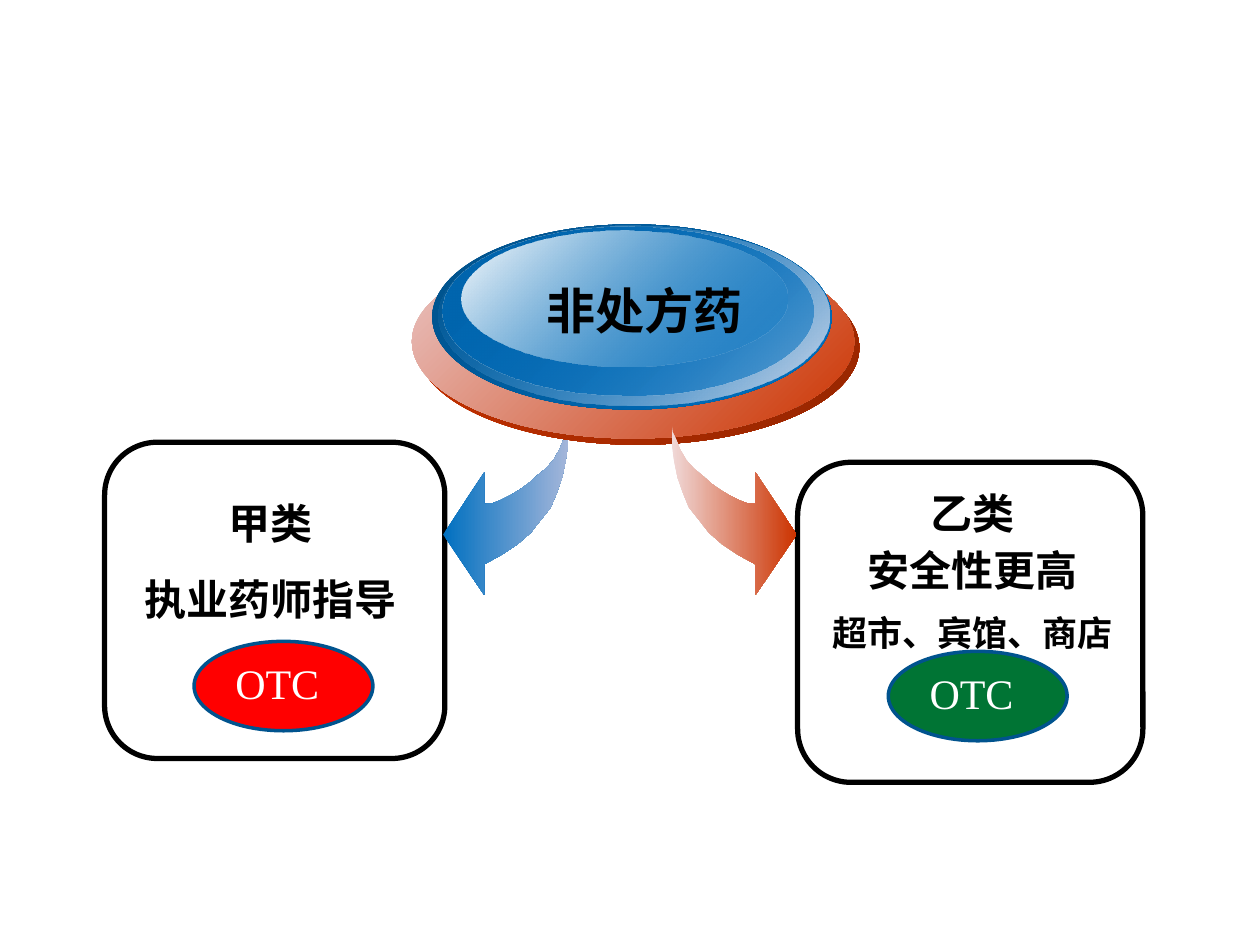
import lxml.etree
import pptx
import pptx.dml.color
import pptx.enum.shapes
import pptx.enum.text
import pptx.oxml.ns
import pptx.util

Pt = pptx.util.Pt
SHAPE = pptx.enum.shapes.MSO_SHAPE
ALIGN = pptx.enum.text.PP_ALIGN
qn = pptx.oxml.ns.qn

ARROW = [
    (0, 0), (0, 11.5), (1.5, 21.5), (3.5, 31), (6.5, 39.5), (10, 48),
    (16, 55.5), (21.5, 62.5), (29, 69), (38, 75), (48, 80.5), (48, 98),
    (71.5, 63.5), (48, 28), (48, 46), (43, 45.5), (39, 44), (33, 41),
    (28, 38), (23, 34.5), (18, 30), (13, 26), (8.5, 21), (5, 15),
    (3, 10), (0.75, 5),
]
DISC_LAYERS = [
    ((238.3, 143.3, 252.7, 110.9), [("CC3300", 100), ("952500", 100)]),
    ((235.4, 139.7, 252.7, 110.9), [("EAC7C6", 100), ("CC3300", 100)]),
    ((247, 128.2, 228.2, 105.8), [("005089", 100), ("0070C0", 100)]),
    ((250.6, 128.9, 223.2, 103), [("0070C0", 0), ("D4DBEB", 100)]),
    ((252.7, 129.6, 212.4, 96.5), [("0065AE", 100), ("0070C0", 48)]),
    ((263.5, 131.8, 186.5, 77.8), [("FFFFFF", 100), ("0070C0", 38)]),
]


def rgb(value):
    return pptx.dml.color.RGBColor.from_string(value)


class SlideBuilder:
    cjk = "Noto Sans CJK SC"
    black = "000000"
    badge_line = "00538E"

    def __init__(self, slide):
        self.s = slide

    def gradient(self, sp, stops, angle):
        sp.fill.gradient()
        sp.fill.gradient_angle = angle
        for stop, (color, opacity) in zip(sp.fill.gradient_stops, stops):
            stop.color.rgb = rgb(color)
        for clr, (color, opacity) in zip(sp._element.spPr.iter(qn("a:srgbClr")), stops):
            if opacity < 100:
                lxml.etree.SubElement(clr, qn("a:alpha"), val=str(opacity * 1000))

    def shape(self, kind, box, fill=None, line=None, width=0):
        sp = self.s.shapes.add_shape(kind, *map(Pt, box))
        sp.shadow.inherit = False
        if fill:
            sp.fill.solid()
            sp.fill.fore_color.rgb = rgb(fill)
        else:
            sp.fill.background()
        if line:
            sp.line.color.rgb = rgb(line)
            sp.line.width = Pt(width)
        else:
            sp.line.fill.background()
        return sp

    def card(self, box):
        return self.shape(SHAPE.ROUNDED_RECTANGLE, box, line=self.black, width=3)

    def disc(self, layers):
        for box, stops in layers:
            self.gradient(self.shape(SHAPE.OVAL, box), stops, 315)

    def arrow(self, x, y, direction, stops):
        points = [(Pt(x + direction * dx), Pt(y + dy)) for dx, dy in ARROW]
        fb = self.s.shapes.build_freeform(*points[0])
        fb.add_line_segments(points[1:], close=True)
        sp = fb.convert_to_shape()
        sp.shadow.inherit = False
        self.gradient(sp, stops, 0)
        sp.line.fill.background()

    def text(self, box, lines, font, color, bold=True, align=ALIGN.CENTER, spacing=None):
        tf = self.s.shapes.add_textbox(*map(Pt, box)).text_frame
        tf.word_wrap = True
        for i, (content, size) in enumerate(lines):
            p = tf.paragraphs[0] if i == 0 else tf.add_paragraph()
            for name, value in {"alignment": align, "line_spacing": spacing}.items():
                setattr(p, name, value)
            r = p.add_run()
            r.text = content
            for name, value in {"name": font, "size": Pt(size), "bold": bold}.items():
                setattr(r.font, name, value)
            r.font.color.rgb = rgb(color)
            if font == self.cjk:
                ea = lxml.etree.Element(qn("a:ea"), typeface=font)
                r.font._element.find(qn("a:latin")).addnext(ea)

    def badge(self, x, y, fill):
        self.shape(SHAPE.OVAL, (x, y, 102.2, 51.1), fill, self.badge_line, 2)
        self.text((x + 16.5, y + 5.8, 67.7, 36), [("OTC", 24)],
                  "Times New Roman", "FFFFFF", False, ALIGN.LEFT)


def main():
    prs = pptx.Presentation()
    prs.slide_width, prs.slide_height = Pt(720), Pt(540)
    b = SlideBuilder(prs.slides.add_slide(prs.slide_layouts[6]))

    b.card((59.8, 252.7, 194.4, 180.7))
    b.text((67.7, 266.4, 173.5, 145.4), [("甲类", 24), ("执业药师指导", 24)],
           b.cjk, b.black, spacing=1.5)
    b.arrow(324.75, 242, -1, [("0070C0", 100), ("A4B6DA", 100)])

    b.disc(DISC_LAYERS)
    b.text((297.4, 157, 141.8, 74.9), [("非处方药", 28)], "Arial", b.black)

    b.card((455.8, 264.2, 197.3, 182.9))
    b.text((456.5, 270.7, 198.7, 131.8),
           [("乙类", 24), ("安全性更高", 24), ("超市、宾馆、商店", 20)],
           b.cjk, b.black, spacing=Pt(33))
    b.arrow(383.75, 242, 1, [("F0D9D8", 100), ("CC3300", 100)])

    b.badge(110.9, 366.5, "FF0000")
    b.badge(507.6, 372.2, "007434")
    prs.save("out.pptx")


if __name__ == "__main__":
    main()
